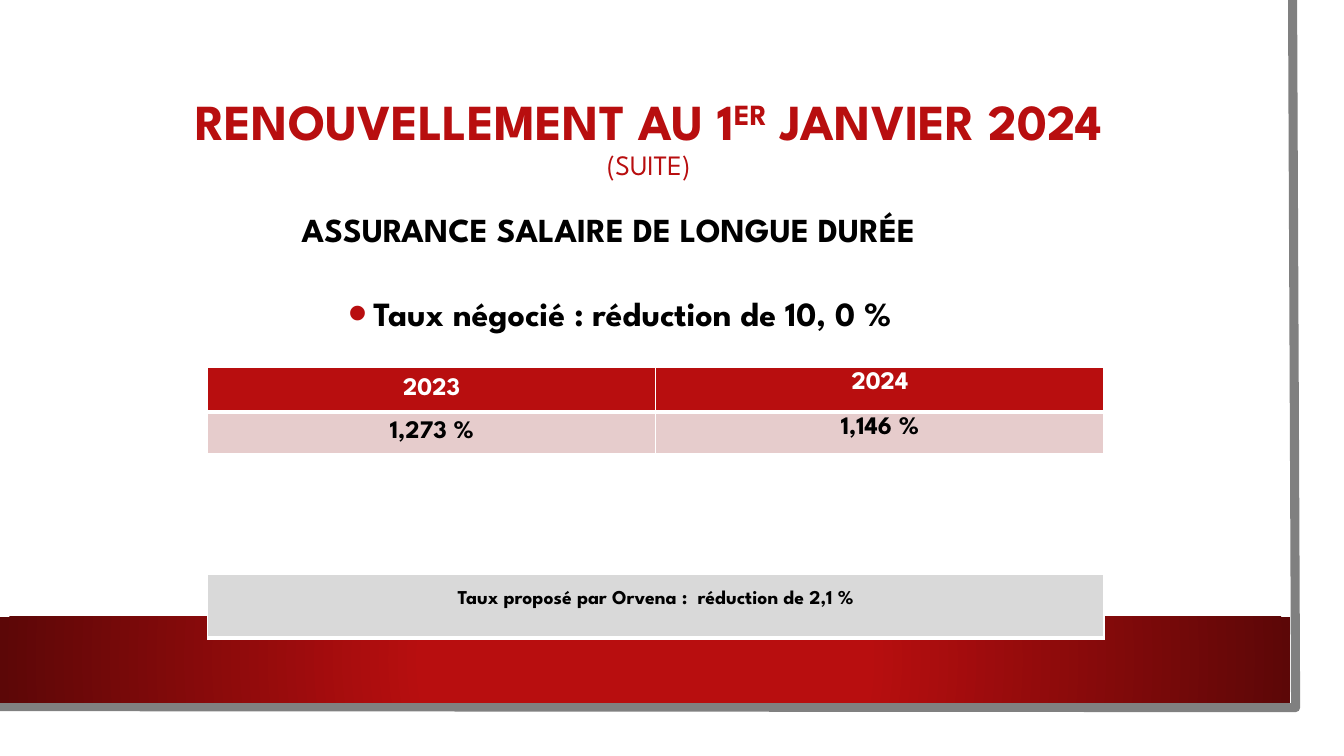
from lxml.etree import SubElement
from pptx import Presentation
from pptx.dml.color import RGBColor
from pptx.enum.shapes import MSO_SHAPE
from pptx.enum.text import MSO_ANCHOR, PP_ALIGN
from pptx.oxml import parse_xml
from pptx.oxml.ns import nsdecls, qn
from pptx.util import Inches, Pt

FONT = "League Spartan"
RED = RGBColor(0xB8, 0x0E, 0x0F)
GREY = RGBColor(0x80, 0x80, 0x80)
LIGHT_GREY = RGBColor(0xD9, 0xD9, 0xD9)
PINK = RGBColor(0xE6, 0xCC, 0xCC)
BLACK = RGBColor(0, 0, 0)
WHITE = RGBColor(0xFF, 0xFF, 0xFF)

deck = Presentation()
deck.slide_width, deck.slide_height = Inches(13.33), Inches(7.5)
page = deck.slides.add_slide(deck.slide_layouts[6])

# Shared grid: both tables and the bullet start at the same left edge
GRID_LEFT, GRID_WIDTH = 2.06, 8.89


def add_span(para, text, size, color, bold=True):
    para.alignment = PP_ALIGN.CENTER
    span = para.add_run()
    span.text = text
    formats = {"name": FONT, "size": Pt(size), "bold": bold}
    for name, value in formats.items():
        setattr(span.font, name, value)
    span.font.color.rgb = color
    return span


def add_box(left, top, width, height, anchor):
    box = page.shapes.add_textbox(*map(Inches, (left, top, width, height)))
    box.text_frame.word_wrap = True
    box.text_frame.vertical_anchor = anchor
    return box.text_frame.paragraphs[0]


# Grey edge along the right and bottom of the sheet
builder = page.shapes.build_freeform(Inches(12.82), 0)
builder.add_line_segments(
    [(Inches(12.85), Inches(7.02)), (Inches(-0.03), Inches(7.01))], close=False)
edge = builder.convert_to_shape()
edge.shadow.inherit = False
edge.fill.background()
edge.line.color.rgb = GREY
edge.line.width = Pt(6.5)

# Red band with a radial gradient
band = page.shapes.add_shape(
    MSO_SHAPE.RECTANGLE, 0, Inches(6.12), Inches(12.8), Inches(0.85))
band.shadow.inherit = False
band.line.fill.background()
band.fill.gradient()
gradient = band._element.spPr.find(qn("a:gradFill"))
gradient.getparent().replace(gradient, parse_xml(
    f'<a:gradFill {nsdecls("a")} rotWithShape="1"><a:gsLst>'
    '<a:gs pos="34000"><a:srgbClr val="B80E0F"/></a:gs>'
    '<a:gs pos="100000"><a:srgbClr val="5C0707"/></a:gs></a:gsLst>'
    '<a:path path="circle"><a:fillToRect l="50000" t="50000" r="50000" b="50000"/>'
    '</a:path></a:gradFill>'))

# Title
title = add_box(0.75, 0.75, 11.37, 1.26, MSO_ANCHOR.MIDDLE)
title.line_spacing = 0.9
add_span(title, "RENOUVELLEMENT AU 1", 36, RED)
ordinal = add_span(title, "ER", 36, RED)
ordinal.font._element.set("baseline", "30000")
add_span(title, " JANVIER 2024", 36, RED)
title.add_line_break()
add_span(title, "(SUITE)", 20, RED, bold=False)

# Subheading
subheading = add_box(2.68, 2.02, 6.71, 0.5, MSO_ANCHOR.TOP)
add_span(subheading, "ASSURANCE SALAIRE DE LONGUE DURÉE", 24, BLACK)

# Bullet
bullet = add_box(GRID_LEFT, 2.85, 8.18, 0.5, MSO_ANCHOR.MIDDLE)
properties = bullet._p.get_or_add_pPr()
properties.set("marL", str(Inches(0.25)))
properties.set("indent", str(Inches(-0.25)))
bullet_color = SubElement(properties, qn("a:buClr"))
SubElement(bullet_color, qn("a:srgbClr")).set("val", str(RED))
SubElement(properties, qn("a:buSzPct")).set("val", "160000")
SubElement(properties, qn("a:buFont")).set("typeface", "Arial")
SubElement(properties, qn("a:buChar")).set("char", "•")
add_span(bullet, "Taux négocié : réduction de 10, 0 %", 24.2, BLACK)

# Tables: top, text size, and rows of (height, fill, colour, bottom border, cells)
MIDDLE, TOP = MSO_ANCHOR.MIDDLE, MSO_ANCHOR.TOP
tables = [
    (3.64, 18, [
        (0.45, RED, WHITE, 3, [("2023", MIDDLE), ("2024", TOP)]),
        (0.41, PINK, BLACK, 1, [("1,273 %", MIDDLE), ("1,146 %", TOP)])]),
    (5.7, 14, [
        (0.63, LIGHT_GREY, BLACK, 3,
         [("Taux proposé par Orvena :  réduction de 2,1 %", MIDDLE)])]),
]
for top, size, rows in tables:
    column_count = len(rows[0][4])
    height = sum(row[0] for row in rows)
    table = page.shapes.add_table(
        len(rows), column_count, Inches(GRID_LEFT), Inches(top),
        Inches(GRID_WIDTH), Inches(height)).table
    for row_index, (row_height, fill, color, bottom, entries) in enumerate(rows):
        table.rows[row_index].height = Inches(row_height)
        above = rows[row_index - 1][3] if row_index else 1
        for column_index, (text, anchor) in enumerate(entries):
            cell = table.cell(row_index, column_index)
            cell.vertical_anchor = anchor
            if column_count == 1:
                cell.margin_bottom = Inches(0.18)
            add_span(cell.text_frame.paragraphs[0], text, size, color)
            borders = {"lnL": 1, "lnR": 1, "lnT": above, "lnB": bottom}
            for side, width in borders.items():
                line = SubElement(cell._tc.get_or_add_tcPr(), qn(f"a:{side}"))
                line.set("w", str(Pt(width)))
                line_fill = SubElement(line, qn("a:solidFill"))
                SubElement(line_fill, qn("a:srgbClr")).set("val", str(WHITE))
            cell.fill.solid()
            cell.fill.fore_color.rgb = fill

deck.save("out.pptx")
